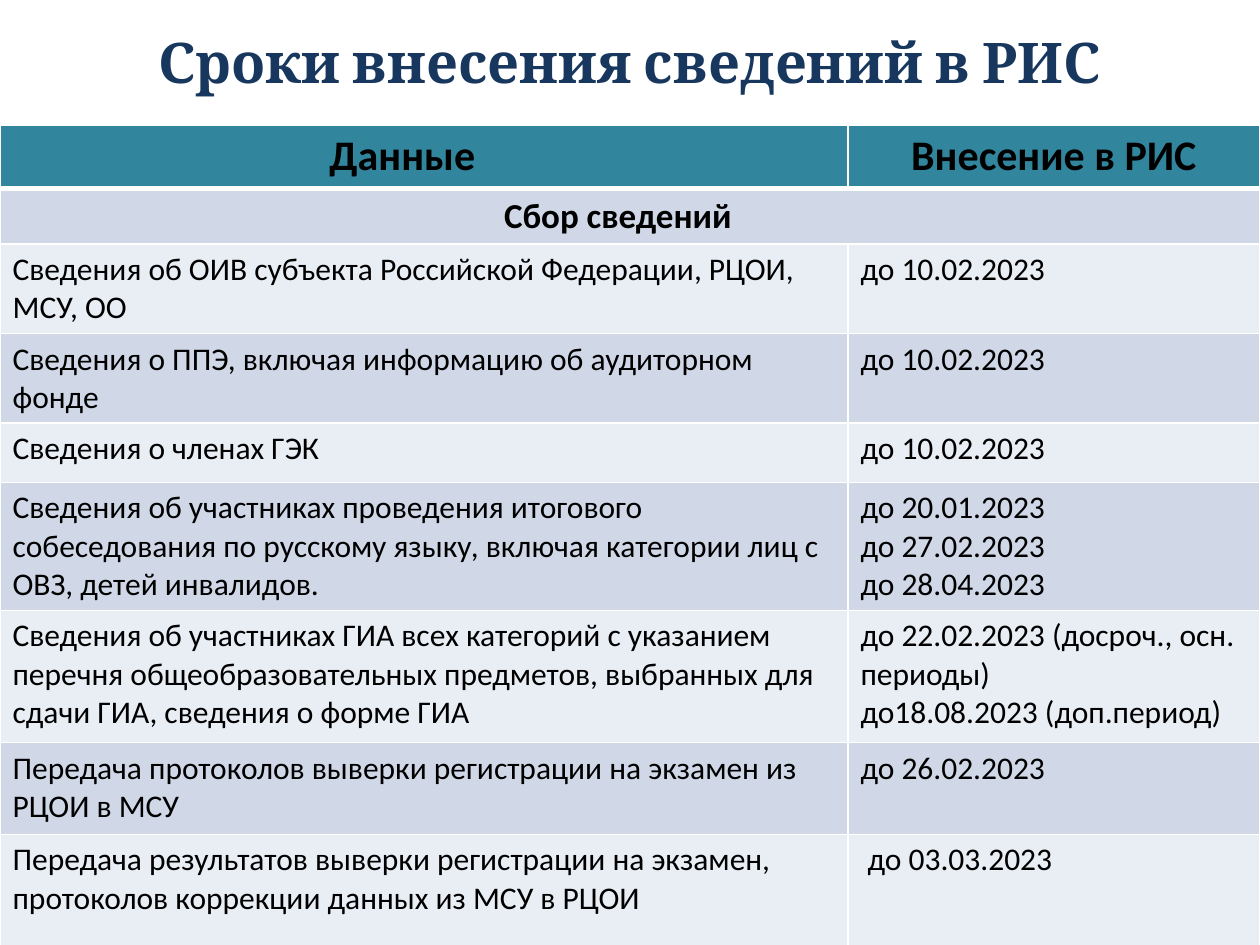
from dataclasses import dataclass

from lxml.etree import SubElement
from pptx import Presentation
from pptx.dml.color import RGBColor
from pptx.enum.text import MSO_ANCHOR, MSO_AUTO_SIZE, PP_ALIGN
from pptx.oxml.ns import qn
from pptx.util import Inches, Pt


@dataclass(frozen=True)
class Theme:
    title_font: str = "Cambria"
    body_font: str = "Calibri"
    title_color: str = "17375E"
    text_color: str = "000000"
    header_fill: str = "31859C"
    bands: tuple = ("E9EDF4", "D0D8E8")
    border: str = "FFFFFF"
    title_size: int = 32
    header_size: int = 24
    section_size: int = 20
    body_size: int = 18


THEME = Theme()
COLUMN_SHARES = (0.673, 0.327)
ROW_HEIGHTS = (0.49, 0.42, 0.67, 0.69, 0.47, 0.99, 1.05, 0.73, 1.02)
TABLE_TOP = 0.99

# The tab after a centred heading shifts it to the left
ROWS = (
    ("Данные\t", "Внесение в РИС"),
    ("Сбор сведений\t",),
    ("Сведения об ОИВ субъекта Российской Федерации, РЦОИ, МСУ, ОО", "до 10.02.2023"),
    ("Сведения о ППЭ, включая информацию об аудиторном фонде", "до 10.02.2023"),
    ("Сведения о членах ГЭК", "до 10.02.2023"),
    ("Сведения об участниках проведения итогового собеседования по русскому языку, "
     "включая категории лиц с ОВЗ, детей инвалидов.",
     "до 20.01.2023\nдо 27.02.2023\nдо 28.04.2023"),
    ("Сведения об участниках ГИА всех категорий с указанием перечня "
     "общеобразовательных предметов, выбранных для сдачи ГИА, сведения о форме ГИА",
     "до 22.02.2023 (досроч., осн. периоды)\nдо18.08.2023 (доп.период)"),
    ("Передача протоколов выверки регистрации на экзамен из РЦОИ в МСУ", "до 26.02.2023"),
    ("Передача результатов выверки регистрации на экзамен, протоколов коррекции "
     "данных из МСУ в РЦОИ", " до 03.03.2023"),
)


def format_text(tf, font, size, color, bold, align):
    for p in tf.paragraphs:
        p.alignment = align
        p.font.name = font
        p.font.size = Pt(size)
        p.font.bold = bold
        p.font.color.rgb = RGBColor.from_string(color)


def set_borders(cell, top, bottom):
    """Draw the four cell borders; must come before the cell's fill."""
    tc_pr = cell._tc.get_or_add_tcPr()
    for side, width in (("L", 1), ("R", 1), ("T", top), ("B", bottom)):
        ln = SubElement(tc_pr, qn(f"a:ln{side}"), w=str(Pt(width)))
        fill = SubElement(ln, qn("a:solidFill"))
        SubElement(fill, qn("a:srgbClr"), val=THEME.border)


def add_title(slide, prs, text):
    title = slide.shapes.title
    title.left, title.top = Inches(0.51), Inches(0.13)
    title.width, title.height = prs.slide_width - 2 * title.left, Inches(0.71)
    tf = title.text_frame
    tf.text = text
    tf.auto_size = MSO_AUTO_SIZE.NONE
    tf.vertical_anchor = MSO_ANCHOR.MIDDLE
    format_text(tf, THEME.title_font, THEME.title_size, THEME.title_color,
                True, PP_ALIGN.CENTER)


def style_cell(cell, row):
    # Row 0 is the header, row 1 the section heading, the rest is data
    size = {0: THEME.header_size, 1: THEME.section_size}.get(row, THEME.body_size)
    heading = row < 2
    format_text(cell.text_frame, THEME.body_font, size, THEME.text_color, heading,
                PP_ALIGN.CENTER if heading else PP_ALIGN.LEFT)
    set_borders(cell, top=3 if row == 1 else 1, bottom=3 if row == 0 else 1)
    cell.fill.solid()
    color = THEME.bands[row % 2] if row else THEME.header_fill
    cell.fill.fore_color.rgb = RGBColor.from_string(color)


def add_schedule(slide, prs):
    table = slide.shapes.add_table(
        len(ROWS), len(COLUMN_SHARES), 0, Inches(TABLE_TOP),
        prs.slide_width, Inches(sum(ROW_HEIGHTS))).table
    for column, share in zip(table.columns, COLUMN_SHARES):
        column.width = int(prs.slide_width * share)
    for i, (texts, height) in enumerate(zip(ROWS, ROW_HEIGHTS)):
        table.rows[i].height = Inches(height)
        # A single text spans the whole row
        if len(texts) == 1:
            table.cell(i, 0).merge(table.cell(i, len(COLUMN_SHARES) - 1))
        for j, text in enumerate(texts):
            table.cell(i, j).text = text
        for cell in table.rows[i].cells:
            style_cell(cell, i)


def main():
    prs = Presentation()
    prs.slide_width, prs.slide_height = Inches(10), Inches(7.5)
    slide = prs.slides.add_slide(prs.slide_layouts[5])
    add_title(slide, prs, "Сроки внесения сведений в РИС")
    add_schedule(slide, prs)
    prs.save("out.pptx")


if __name__ == "__main__":
    main()
